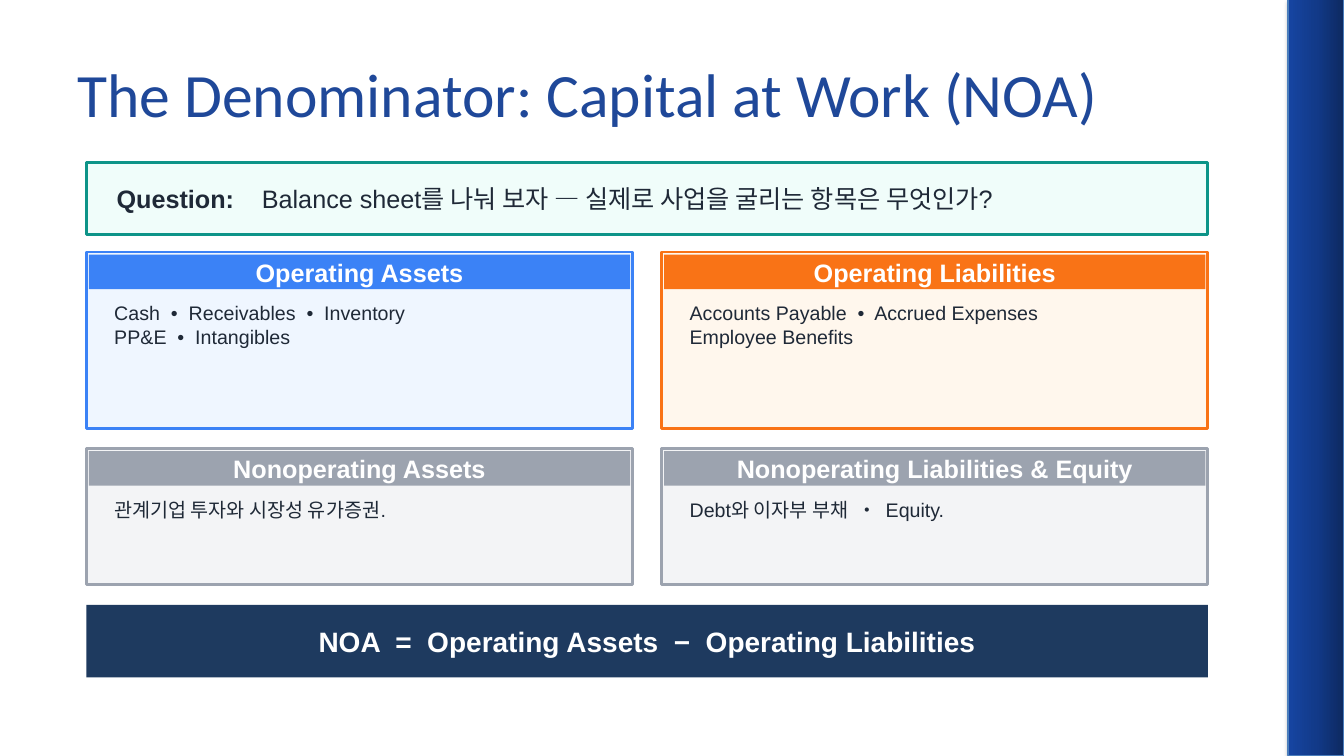
from copy import deepcopy

from lxml import etree
from pptx import Presentation
from pptx.dml.color import RGBColor
from pptx.enum.shapes import MSO_SHAPE
from pptx.enum.text import MSO_ANCHOR, MSO_AUTO_SIZE, PP_ALIGN
from pptx.oxml import parse_xml
from pptx.util import Cm, Pt

RECTANGLE = MSO_SHAPE.RECTANGLE
TOP, MIDDLE = MSO_ANCHOR.TOP, MSO_ANCHOR.MIDDLE
LEFT, CENTER = PP_ALIGN.LEFT, PP_ALIGN.CENTER
NO_AUTOFIT = MSO_AUTO_SIZE.NONE
DRAWING_NS = "http://schemas.openxmlformats.org/drawingml/2006/main"
INK, WHITE, GRAY = "1F2937", "FFFFFF", "9CA3AF"

deck = Presentation()
deck.slide_width, deck.slide_height = Cm(33.87), Cm(19.05)
page = deck.slides.add_slide(deck.slide_layouts[5])


def add_panel(left, top, width, height, fill, line=None):
    panel = page.shapes.add_shape(RECTANGLE, Cm(left), Cm(top), Cm(width), Cm(height))
    panel.shadow.inherit = False
    panel.fill.solid()
    panel.fill.fore_color.rgb = RGBColor.from_string(fill)
    if line:
        panel.line.color.rgb = RGBColor.from_string(line)
        panel.line.width = Pt(2)
    else:
        panel.line.fill.background()
    return panel


def add_label(left, top, width, height, text, size, color=INK, bold=False,
              align=LEFT, anchor=MIDDLE):
    box = page.shapes.add_textbox(Cm(left), Cm(top), Cm(width), Cm(height))
    frame = box.text_frame
    frame.word_wrap = True
    frame.vertical_anchor = anchor
    frame.text = text
    for para in frame.paragraphs:
        para.alignment = align
        for span in para.runs:
            span.font.name = "Arial"
            span.font.size = Pt(size)
            span.font.bold = bold
            span.font.color.rgb = RGBColor.from_string(color)
    return box


# Side band with gradient and soft shadow
band = add_panel(32.46, 0, 1.41, 19.05, "123A89", "4B7EBC")
band.line.width = Pt(0.75)
band.fill.gradient()
band.fill.gradient_angle = 180
first_stop = band.fill.gradient_stops[0]
first_stop.color.rgb = RGBColor.from_string("123A89")
stop_list = band._element.spPr.find(f".//{{{DRAWING_NS}}}gsLst")
middle_stop = deepcopy(stop_list[0])
middle_stop.set("pos", "50000")
stop_list.insert(1, middle_stop)
for stop, color in zip(band.fill.gradient_stops, ("0D2960", "123A89", "1645A2")):
    stop.color.rgb = RGBColor.from_string(color)
effects = band._element.spPr.find(f"{{{DRAWING_NS}}}effectLst")
shadow = etree.SubElement(effects, f"{{{DRAWING_NS}}}outerShdw", blurRad=str(Pt(3.1)),
                          dist=str(Pt(1.8)), dir="5400000", rotWithShape="0")
shadow_color = etree.SubElement(shadow, f"{{{DRAWING_NS}}}srgbClr", val="000000")
etree.SubElement(shadow_color, f"{{{DRAWING_NS}}}alpha", val="35000")

# Title
title = page.shapes.title
title.left, title.top, title.width, title.height = Cm(1.7), Cm(0.76), Cm(30.76), Cm(3.18)
title_frame = title.text_frame
title_frame.text = "The Denominator: Capital at Work (NOA)"
title_frame.auto_size = NO_AUTOFIT
title_frame.vertical_anchor = MIDDLE
title_para = title_frame.paragraphs[0]
title_para.alignment = LEFT
title_font = title_para.runs[0].font
title_font.name = "Calibri"
title_font.size = Pt(44)
title_font.color.rgb = RGBColor.from_string("1F4899")

# Shared grid
grid_left, grid_width, bar_height = 2.18, 28.26, 1.83
card_width = 13.76
column_lefts = (grid_left, grid_left + grid_width - card_width)
text_left, text_width = grid_left + 0.51, grid_width - 1.02

# Question bar
add_panel(grid_left, 4.09, grid_width, bar_height, "F0FDFA", "0D9488")
question = add_label(text_left, 4.09, text_width, bar_height, "Question:", 18, bold=True)
question_para = question.text_frame.paragraphs[0]
question_para._p.get_or_add_pPr().append(parse_xml(
    f'<a:tabLst xmlns:a="{DRAWING_NS}"><a:tab pos="{Cm(3.66)}" algn="l"/></a:tabLst>'))
question_span = question_para.add_run()
question_span.text = "\tBalance sheet를 나눠 보자 — 실제로 사업을 굴리는 항목은 무엇인가?"
question_span.font.name = "Arial"
question_span.font.size = Pt(18)
question_span.font.bold = False
question_span.font.color.rgb = RGBColor.from_string(INK)

# Balance sheet cards: top, height, then heading, items, accent and tint per column
card_rows = [
    (6.35, 4.45, [
        ("Operating Assets", "Cash  •  Receivables  •  Inventory\nPP&E  •  Intangibles",
         "3B82F6", "EFF6FF"),
        ("Operating Liabilities", "Accounts Payable  •  Accrued Expenses\nEmployee Benefits",
         "F97316", "FFF7ED"),
    ]),
    (11.3, 3.43, [
        ("Nonoperating Assets", "관계기업 투자와 시장성 유가증권.", GRAY, "F3F4F6"),
        ("Nonoperating Liabilities & Equity", "Debt와 이자부 부채  •  Equity.", GRAY, "F3F4F6"),
    ]),
]
for top, height, cards in card_rows:
    for left, (heading, items, accent, tint) in zip(column_lefts, cards):
        add_panel(left, top, card_width, height, tint, accent)
        header_area = (left + 0.06, top + 0.07, card_width - 0.12, 0.87)
        add_panel(*header_area, accent)
        add_label(*header_area, heading, 18, WHITE, bold=True, align=CENTER)
        add_label(left + 0.45, top + 1.12, card_width - 0.9, height - 1.32, items, 14,
                  anchor=TOP)

# Formula bar
add_panel(grid_left, 15.24, grid_width, bar_height, "1E3A5F")
add_label(text_left, 15.24, text_width, bar_height,
          "NOA  =  Operating Assets  −  Operating Liabilities", 20, WHITE,
          bold=True, align=CENTER)

deck.save("out.pptx")
